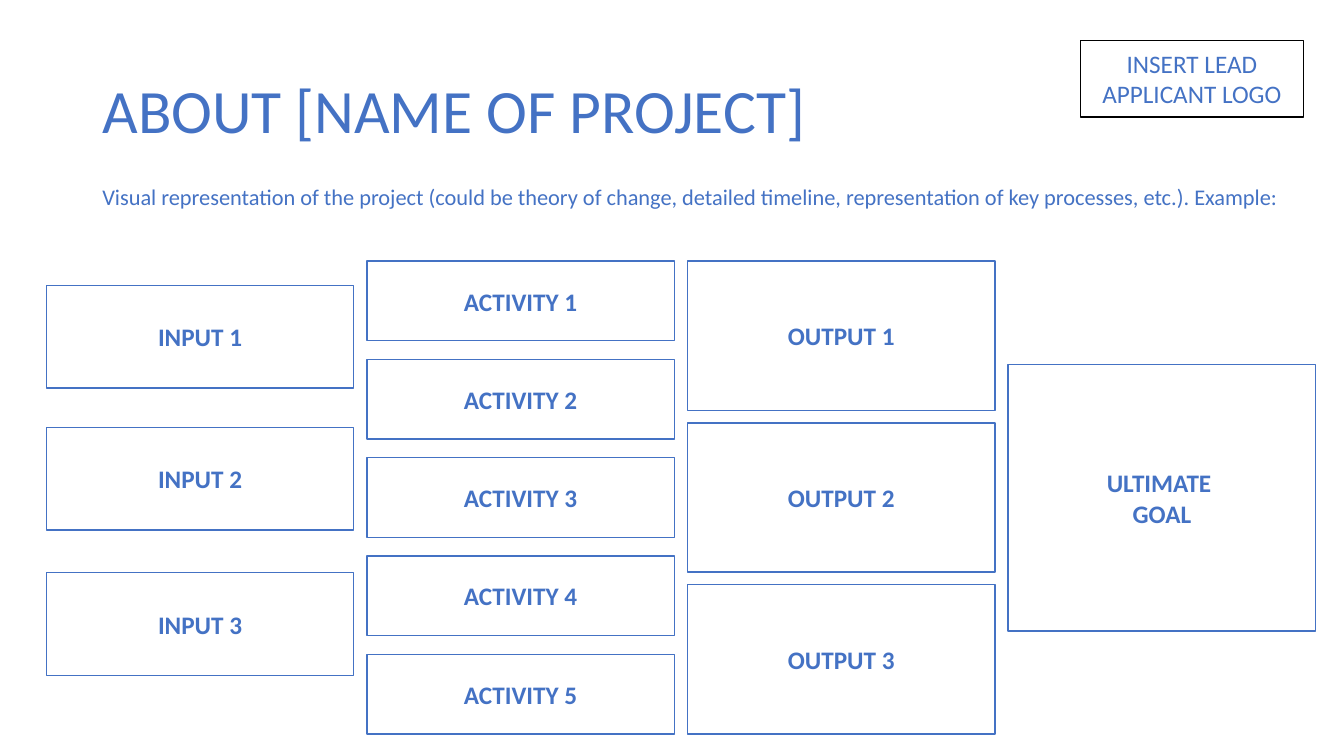
from pptx import Presentation
from pptx.dml.color import RGBColor
from pptx.enum.shapes import MSO_SHAPE as Shape
from pptx.enum.text import MSO_ANCHOR as Anchor, MSO_AUTO_SIZE as AutoSize, PP_ALIGN as Align
from pptx.util import Pt

BLUE = RGBColor(0x44, 0x72, 0xC4)
BLACK = RGBColor(0, 0, 0)
WHITE = RGBColor(0xFF, 0xFF, 0xFF)

COLUMN_LEFT, COLUMN_PITCH, COLUMN_WIDTH = 33.1, 229, 219.6
CHART_TOP = 186.5


class ProjectSlide:
    font = "Calibri"
    color = BLUE

    def __init__(self, slide):
        self.slide = slide

    def add_lines(self, frame, lines, size, bold=False, align=Align.LEFT, anchor=Anchor.MIDDLE):
        """Fill the frame with one paragraph per line."""
        frame.word_wrap = True
        frame.vertical_anchor = anchor
        for index, line in enumerate(lines):
            paragraph = frame.add_paragraph() if index else frame.paragraphs[0]
            paragraph.alignment = align
            run = paragraph.add_run()
            run.text = line
            run.font.name = self.font
            run.font.size = Pt(size)
            run.font.bold = bold
            run.font.color.rgb = self.color

    def title(self, text, left, top, width, height):
        heading = self.slide.shapes.title
        heading.left, heading.top = Pt(left), Pt(top)
        heading.width, heading.height = Pt(width), Pt(height)
        self.add_lines(heading.text_frame, [text], 44)
        heading.text_frame.auto_size = AutoSize.NONE
        heading.text_frame.paragraphs[0].line_spacing = 0.9

    def caption(self, text, left, top, width, height):
        note = self.slide.shapes.add_textbox(Pt(left), Pt(top), Pt(width), Pt(height))
        self.add_lines(note.text_frame, [text], 16, anchor=Anchor.TOP)
        note.text_frame.auto_size = AutoSize.SHAPE_TO_FIT_TEXT

    def box(self, lines, left, top, width, height, outline=BLUE, bold=True):
        frame = self.slide.shapes.add_shape(
            Shape.RECTANGLE, Pt(left), Pt(top), Pt(width), Pt(height))
        frame.shadow.inherit = False
        frame.fill.solid()
        frame.fill.fore_color.rgb = WHITE
        frame.line.color.rgb = outline
        frame.line.width = Pt(1)
        self.add_lines(frame.text_frame, lines, 18, bold, Align.CENTER)

    def stage(self, column, labels, tops, height):
        """Stack the boxes of one stage in its column."""
        left = COLUMN_LEFT + column * COLUMN_PITCH
        for lines, top in zip(labels, tops):
            self.box(lines, left, top, COLUMN_WIDTH, height)


def numbered(word, count):
    return [[f"{word} {number}"] for number in range(1, count + 1)]


def evenly(count, pitch):
    return [CHART_TOP + row * pitch for row in range(count)]


def main():
    deck = Presentation()
    deck.slide_width, deck.slide_height = Pt(960), Pt(540)
    about = ProjectSlide(deck.slides.add_slide(deck.slide_layouts[5]))

    about.title("ABOUT [NAME OF PROJECT]", 66, 28.75, 828, 104.4)
    about.box(["INSERT LEAD APPLICANT LOGO"], 771.8, 28.8, 159.2, 54.8, BLACK, bold=False)
    about.caption(
        "Visual representation of the project (could be theory of change, detailed timeline, "
        "representation of key processes, etc.). Example:", 66, 127.5, 865, 26.6)

    about.stage(0, numbered("INPUT", 3), [203.8, 305.3, 409], 73.4)
    about.stage(1, numbered("ACTIVITY", 5), evenly(5, 70.2), 56.9)
    about.stage(2, numbered("OUTPUT", 3), evenly(3, 115.6), 106.6)
    about.stage(3, [["ULTIMATE ", "GOAL"]], [260.6], 190.1)

    deck.save("out.pptx")


if __name__ == "__main__":
    main()
